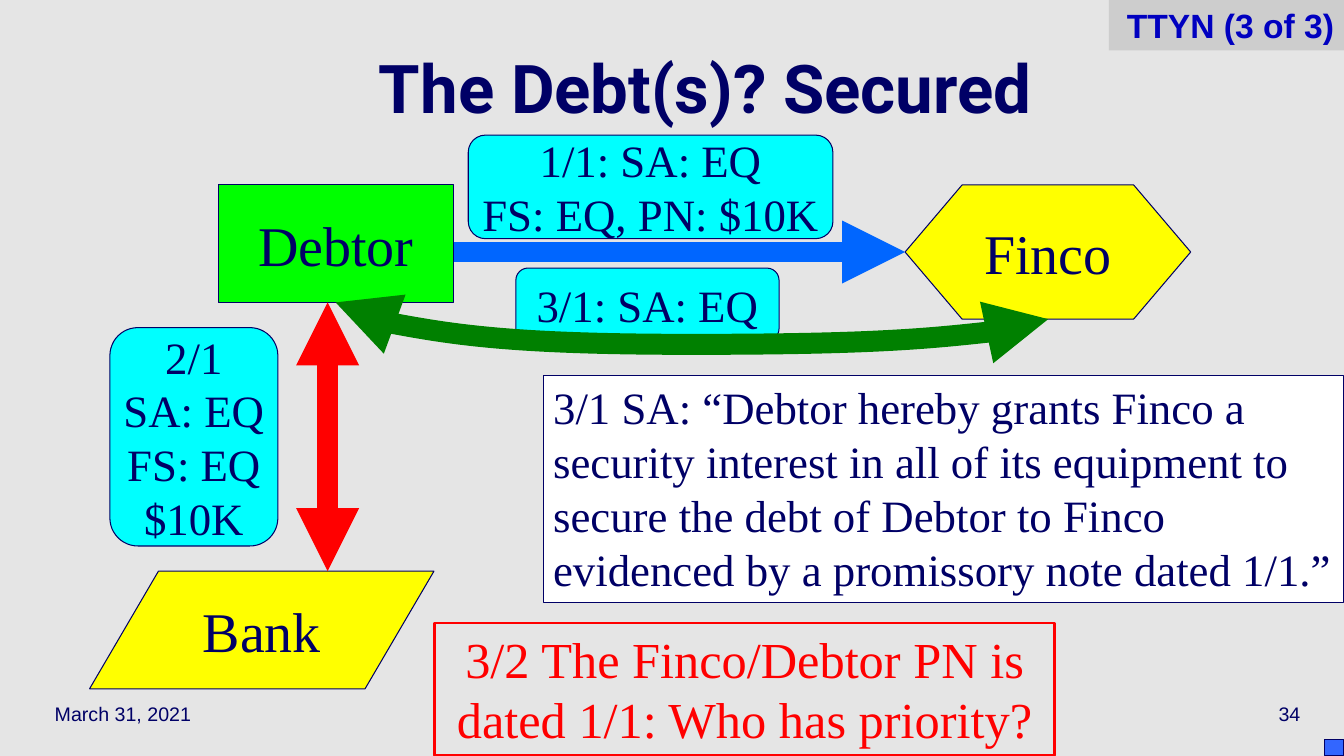
from lxml.etree import SubElement
from pptx import Presentation
from pptx.dml.color import RGBColor
from pptx.enum.shapes import MSO_CONNECTOR, MSO_SHAPE
from pptx.enum.text import MSO_ANCHOR, MSO_AUTO_SIZE, PP_ALIGN
from pptx.oxml.ns import qn
from pptx.util import Pt

COLORS = {
    "page": "E5E5E5", "tag": "CDCDCD", "navy": "000066", "blue": "0000C0",
    "arrow": "0066FF", "corner": "3366FF", "red": "FF0000", "yellow": "FFFF00",
    "lime": "00FF00", "green": "008000", "cyan": "00FFFF", "white": "FFFFFF",
}
SERIF, SANS, HEADING = "Times New Roman", "Arial", "Roboto"
CENTER, LEFT, RIGHT = PP_ALIGN.CENTER, PP_ALIGN.LEFT, PP_ALIGN.RIGHT
LABEL = {"word_wrap": False, "vertical_anchor": MSO_ANCHOR.MIDDLE}
NOTE = {"word_wrap": True, "vertical_anchor": MSO_ANCHOR.TOP,
        "auto_size": MSO_AUTO_SIZE.SHAPE_TO_FIT_TEXT}


def rgb(name):
    return RGBColor.from_string(COLORS[name])


def set_format(target, values):
    for name, value in values.items():
        setattr(target, name, value)


class Slide:
    """Draws styled elements on one slide, with lengths in points."""

    def __init__(self, prs):
        self.s = prs.slides.add_slide(prs.slide_layouts[5])
        fill = self.s.background.fill
        fill.solid()
        fill.fore_color.rgb = rgb("page")

    def fill_text(self, sp, lines, size, color="navy", font=SERIF, bold=False,
                  align=CENTER, frame=LABEL, spacing=None):
        tf = sp.text_frame
        tf.text = "\n".join(lines)
        set_format(tf, frame)
        for p in tf.paragraphs:
            set_format(p, {"alignment": align, "line_spacing": spacing})
            for r in p.runs:
                set_format(r.font, {"name": font, "size": Pt(size), "bold": bold})
                r.font.color.rgb = rgb(color)

    def title(self, box, text):
        sp = self.s.shapes.title
        set_format(sp, dict(zip(("left", "top", "width", "height"), map(Pt, box))))
        self.fill_text(sp, [text], 48, font=HEADING, bold=True, spacing=0.7,
                       frame={**LABEL, "word_wrap": True})

    def text(self, box, text, align):
        sp = self.s.shapes.add_textbox(*map(Pt, box))
        self.fill_text(sp, [text], 14, font=SANS, align=align,
                       frame={**LABEL, "word_wrap": True})

    def shape(self, kind, box, fill=None, lines=(), size=32, line="navy",
              weight=0.75, **style):
        sp = self.s.shapes.add_shape(kind, *map(Pt, box))
        sp.shadow.inherit = False
        if fill:
            sp.fill.solid()
            sp.fill.fore_color.rgb = rgb(fill)
        else:
            sp.fill.background()
        if line:
            sp.line.width = Pt(weight)
            sp.line.color.rgb = rgb(line)
        else:
            sp.line.fill.background()
        if lines:
            self.fill_text(sp, lines, size, **style)

    def arrow(self, ends, color, heads, kind=MSO_CONNECTOR.STRAIGHT):
        sp = self.s.shapes.add_connector(kind, *map(Pt, ends))
        sp.line.width = Pt(15)
        sp.line.color.rgb = rgb(color)
        spPr = sp._element.spPr
        ln = spPr.find(qn("a:ln"))
        for head in heads:
            SubElement(ln, qn(f"a:{head}"), type="triangle")
        SubElement(spPr, qn("a:effectLst"))
        return spPr

    def arc(self, ends, color, heads, bend):
        spPr = self.arrow(ends, color, heads, MSO_CONNECTOR.CURVE)
        xfrm = spPr.find(qn("a:xfrm"))
        xfrm.set("rot", str(270 * 60000))
        xfrm.set("flipH", "1")
        guides = spPr.find(qn("a:prstGeom")).get_or_add_avLst()
        SubElement(guides, qn("a:gd"), name="adj1", fmla=f"val {int(bend * 100000)}")


def main():
    prs = Presentation()
    prs.slide_width, prs.slide_height = Pt(960), Pt(540)
    s = Slide(prs)
    both = ("headEnd", "tailEnd")
    rounded = MSO_SHAPE.FLOWCHART_ALTERNATE_PROCESS

    s.text((32, 492, 200, 36), "March 31, 2021", LEFT)
    s.text((736, 492, 200, 36), "34", RIGHT)
    s.title((64, 24, 880, 90), "The Debt(s)? Secured")

    for kind, box, fill, name in (
        (MSO_SHAPE.FLOWCHART_DATA, (64, 408, 246, 84), "yellow", "Bank"),
        (MSO_SHAPE.FLOWCHART_PROCESS, (156, 132, 168, 84), "lime", "Debtor"),
        (MSO_SHAPE.FLOWCHART_PREPARATION, (646.5, 132, 204, 96), "yellow", "Finco"),
    ):
        s.shape(kind, box, fill, [name], 40)

    s.shape(MSO_SHAPE.RECTANGLE, (310.5, 445, 443, 94.5), None,
            ["3/2 The Finco/Debtor PN is dated 1/1: Who has priority?"], 36,
            line="red", weight=2, color="red", frame=NOTE)
    s.arrow((324, 180, 646.5, 180), "arrow", ["tailEnd"])
    s.shape(rounded, (368.5, 191.5, 188, 52), "cyan", ["3/1: SA: EQ"])
    s.shape(rounded, (78.5, 234, 120, 156), "cyan",
            ["2/1", "SA: EQ", "FS: EQ", "$10K"])
    s.arrow((234, 216, 234, 408), "red", both)
    s.arc((488.25, -32.5, 500.25, 476.5), "green", both, 2.5)
    s.shape(MSO_SHAPE.RECTANGLE, (946, 528, 14, 12), "corner")
    s.shape(MSO_SHAPE.RECTANGLE, (388, 268, 572, 162.5), "white",
            ["3/1 SA: “Debtor hereby grants Finco a security interest in all of "
             "its equipment to secure the debt of Debtor to Finco evidenced by "
             "a promissory note dated 1/1.”"], align=LEFT, frame=NOTE)
    s.shape(rounded, (334.5, 96.5, 260.5, 74), "cyan",
            ["1/1: SA: EQ", "FS: EQ, PN: $10K"])
    s.shape(MSO_SHAPE.RECTANGLE, (792, 0, 168, 36), "tag", ["TTYN (3 of 3)"], 24,
            line=None, color="blue", font=SANS, bold=True, align=RIGHT, frame=NOTE)

    prs.save("out.pptx")


if __name__ == "__main__":
    main()
